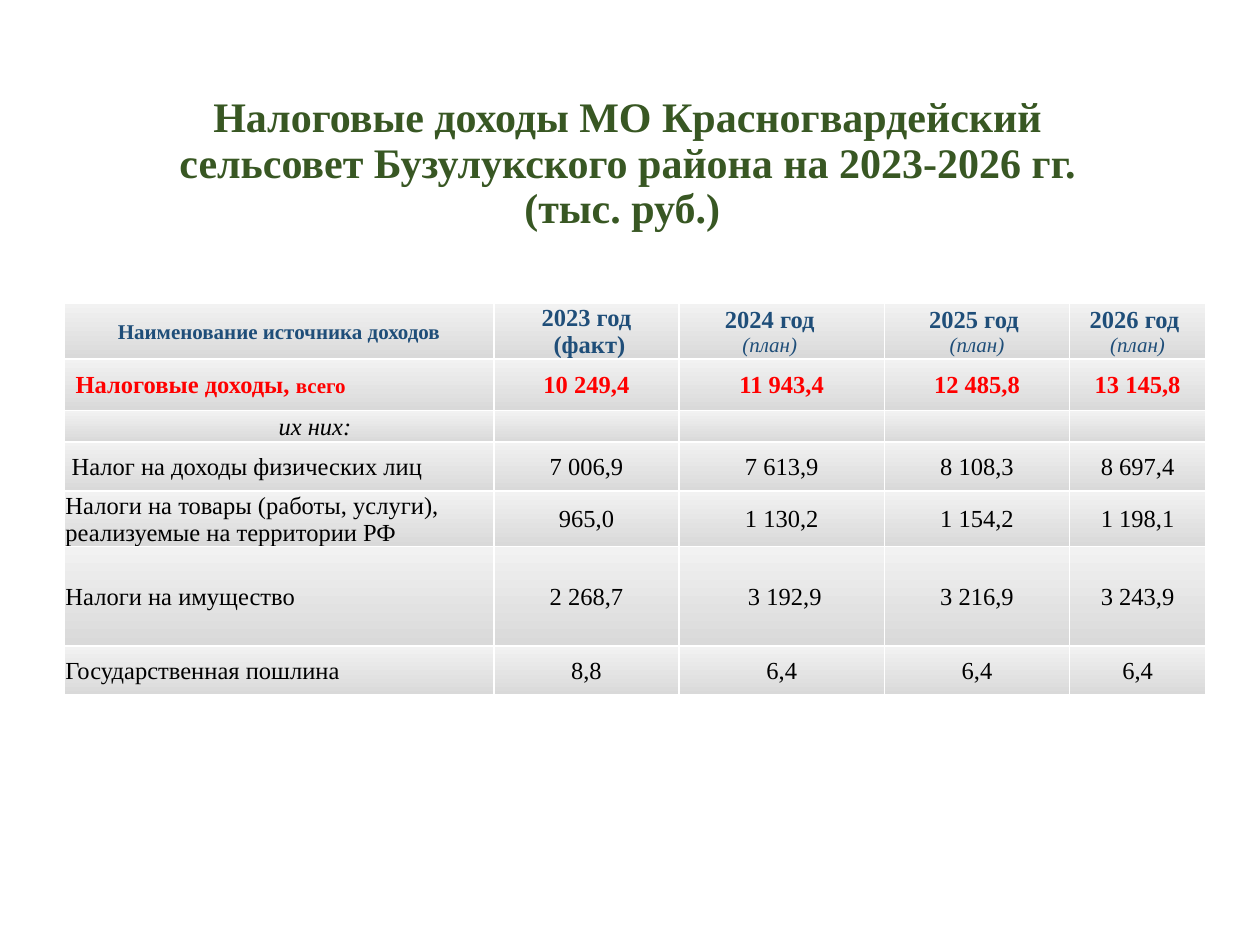
from lxml.etree import SubElement
from pptx import Presentation
from pptx.dml.color import RGBColor
from pptx.enum.text import MSO_ANCHOR, PP_ALIGN
from pptx.oxml import parse_xml
from pptx.oxml.ns import nsdecls, qn
from pptx.util import Inches, Pt

FONT = "Times New Roman"
GREEN = RGBColor(0x38, 0x57, 0x23)
BLUE = RGBColor(0x1F, 0x4E, 0x79)
RED = RGBColor(0xFF, 0x00, 0x00)
BLACK = RGBColor(0x00, 0x00, 0x00)
LIGHT = RGBColor(0xF2, 0xF2, 0xF2)
GREY = RGBColor(0xD9, 0xD9, 0xD9)
WHITE = RGBColor(0xFF, 0xFF, 0xFF)

TITLE = ("Налоговые доходы МО Красногвардейский сельсовет "
         "Бузулукского района на 2023-2026 гг. (тыс. руб.) ")
HEADER = [
    ["Наименование источника доходов"],
    ["2023 год", " (факт)"],
    ["2024 год", "(план)"],
    ["2025 год ", "(план)"],
    ["2026 год ", "(план)"],
]
TOTAL = ["10 249,4", "11 943,4", "12 485,8", "13 145,8"]
TAXES = [
    [" Налог на доходы физических лиц", "7 006,9", "7 613,9", "8 108,3", "8 697,4"],
    ["Налоги на товары (работы, услуги), реализуемые на территории РФ",
     "965,0", "1 130,2", "1 154,2", "1 198,1"],
    ["Налоги на имущество", "2 268,7", " 3 192,9", "3 216,9", "3 243,9"],
    ["Государственная пошлина", "8,8", "6,4", "6,4", "6,4"],
]
COLS = [3.41, 1.47, 1.63, 1.47, 1.08]
ROWS = [0.44, 0.41, 0.2, 0.39, 0.39, 0.79, 0.39]

HEAD = dict(size=Pt(14), bold=True, color=BLUE)
SMALL_HEAD = dict(HEAD, size=Pt(12))
PLAN = dict(SMALL_HEAD, bold=False, italic=True)
SUM = dict(HEAD, color=RED)
BODY = dict(size=Pt(14), bold=False, color=BLACK)
NOTE = dict(BODY, italic=True)


def add_run(p, text, fmt):
    r = p.add_run()
    r.text = text
    r.font.name = FONT
    for name, value in fmt.items():
        if name == "color":
            r.font.color.rgb = value
        else:
            setattr(r.font, name, value)


def add_line(p, runs, align=PP_ALIGN.CENTER, **indents):
    p.alignment = align
    for name, inches in indents.items():
        p._p.get_or_add_pPr().set(name, str(Inches(inches)))
    for text, fmt in runs:
        add_run(p, text, fmt)


def style_cell(cell):
    cell.vertical_anchor = MSO_ANCHOR.MIDDLE
    cell.margin_left = cell.margin_right = cell.margin_top = Inches(0.01)
    cell.margin_bottom = 0
    cell.fill.gradient()
    cell.fill.gradient_angle = 270
    for stop, color, position in zip(cell.fill.gradient_stops, (LIGHT, GREY), (0, 1)):
        stop.color.rgb = color
        stop.position = position
    tcPr = cell._tc.get_or_add_tcPr()
    for i, side in enumerate(("lnL", "lnR", "lnT", "lnB")):
        tcPr.insert(i, parse_xml(
            f'<a:{side} {nsdecls("a")} w="{Pt(1)}"><a:solidFill>'
            f'<a:srgbClr val="{WHITE}"/></a:solidFill></a:{side}>'))


def fill_header(table):
    for c, lines in enumerate(HEADER):
        tf = table.cell(0, c).text_frame
        indents = {"marR": 0.19} if c == 2 else {}
        add_line(tf.paragraphs[0], [(lines[0], HEAD if c else SMALL_HEAD)], **indents)
        for text in lines[1:]:
            add_line(tf.add_paragraph(), [(text, HEAD if c == 1 else PLAN)])


def fill_body(table):
    def first(r, c):
        return table.cell(r, c).text_frame.paragraphs[0]

    add_line(first(1, 0), [("Налоговые доходы, ", SUM), ("всего", dict(SUM, size=Pt(12)))],
             PP_ALIGN.JUSTIFY, marL=0.08)
    for c, value in enumerate(TOTAL, 1):
        add_line(first(1, c), [(value, SUM)])
    add_line(first(2, 0), [("их них:", NOTE)], marL=0.57)
    for c in range(1, len(COLS)):
        SubElement(first(2, c)._p, qn("a:endParaRPr"), sz="1400")
    for r, row in enumerate(TAXES, 3):
        for c, text in enumerate(row):
            add_line(first(r, c), [(text, BODY)], PP_ALIGN.CENTER if c else PP_ALIGN.LEFT)


def main():
    prs = Presentation()
    prs.slide_width, prs.slide_height = Inches(10), Inches(7.5)
    s = prs.slides.add_slide(prs.slide_layouts[5])

    title = s.shapes.title
    title.left, title.top = Inches(1.14), Inches(0.68)
    title.width, title.height = Inches(7.68), Inches(1.25)
    tf = title.text_frame
    tf.vertical_anchor = MSO_ANCHOR.MIDDLE
    tf.paragraphs[0].line_spacing = 0.9
    add_line(tf.paragraphs[0], [(TITLE, dict(size=Pt(24), bold=True, color=GREEN))])

    table = s.shapes.add_table(len(ROWS), len(COLS), Inches(0.51), Inches(2.41),
                               Inches(sum(COLS)), Inches(sum(ROWS))).table
    for col, width in zip(table.columns, COLS):
        col.width = Inches(width)
    for row, height in zip(table.rows, ROWS):
        row.height = Inches(height)
    for cell in table.iter_cells():
        style_cell(cell)
    fill_header(table)
    fill_body(table)
    prs.save("out.pptx")


if __name__ == "__main__":
    main()
